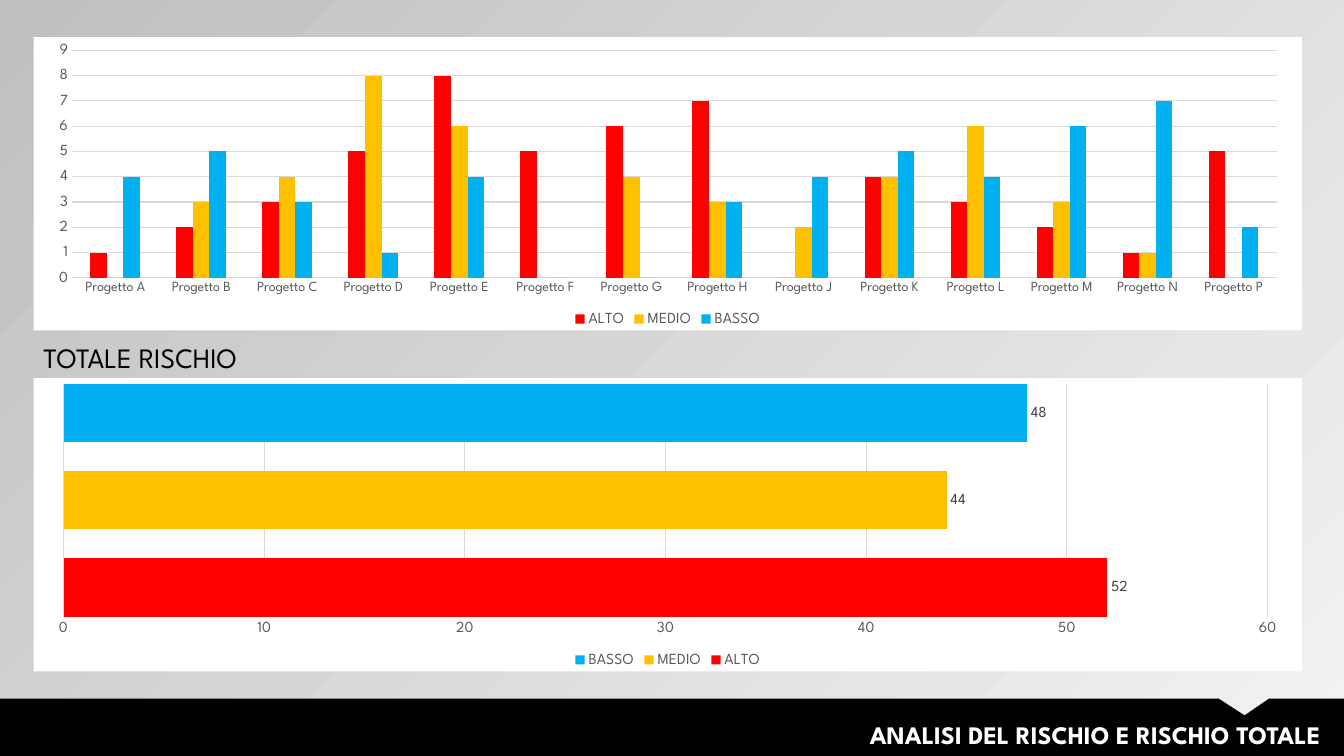
from lxml.etree import fromstring
from pptx import Presentation
from pptx.chart.data import CategoryChartData
from pptx.dml.color import RGBColor
from pptx.enum.chart import XL_CHART_TYPE, XL_LABEL_POSITION, XL_LEGEND_POSITION, XL_TICK_MARK
from pptx.enum.text import MSO_ANCHOR, MSO_AUTO_SIZE, PP_ALIGN
from pptx.util import Pt

BLACK = RGBColor(0x00, 0x00, 0x00)
WHITE = RGBColor(0xFF, 0xFF, 0xFF)
LIGHT = RGBColor(0xF2, 0xF2, 0xF2)
SILVER = RGBColor(0xBF, 0xBF, 0xBF)
GRID = RGBColor(0xD9, 0xD9, 0xD9)
GREY = RGBColor(0x59, 0x59, 0x59)
DARK = RGBColor(0x40, 0x40, 0x40)
RED = RGBColor(0xFF, 0x00, 0x00)
AMBER = RGBColor(0xFF, 0xC0, 0x00)
BLUE = RGBColor(0x00, 0xB0, 0xF0)
FONT = "League Spartan"

TITLE = "ANALISI DEL RISCHIO E RISCHIO TOTALE"
SUBTITLE = "TOTALE RISCHIO"
PROJECTS = [f"Progetto {letter}" for letter in "ABCDEFGHJKLMNP"]
RISKS = [
    ("ALTO", RED, [1, 2, 3, 5, 8, 5, 6, 7, 0, 4, 3, 2, 1, 5]),
    ("MEDIO", AMBER, [0, 3, 4, 8, 6, 0, 4, 3, 2, 4, 6, 3, 1, 0]),
    ("BASSO", BLUE, [4, 5, 3, 1, 4, 0, 0, 3, 4, 5, 4, 6, 7, 2]),
]
TOTALS = [(name, color, [sum(values)]) for name, color, values in RISKS]

WIDTH, HEIGHT = 960, 540
BAND_TOP = 499
BAND = [(0, BAND_TOP), (870.5, BAND_TOP), (889, 511), (906.5, BAND_TOP),
        (WIDTH, BAND_TOP), (WIDTH, HEIGHT), (0, HEIGHT)]
CHART_LEFT, CHART_WIDTH, CHART_HEIGHT = 24, 906, 209.5
PROJECTS_TOP, TOTALS_TOP = 26.5, 270
WHITE_FILL = (
    '<c:spPr xmlns:c="http://schemas.openxmlformats.org/drawingml/2006/chart"'
    ' xmlns:a="http://schemas.openxmlformats.org/drawingml/2006/main">'
    f'<a:solidFill><a:srgbClr val="{WHITE}"/></a:solidFill>'
    '<a:ln><a:noFill/></a:ln></c:spPr>'
)


def set_font(font, size, color, bold=False):
    font.name, font.size, font.bold = FONT, Pt(size), bold
    font.color.rgb = color


def set_text(sp, text, size, color, bold=False, align=PP_ALIGN.LEFT, wrap=True):
    tf = sp.text_frame
    tf.text = text
    tf.word_wrap = wrap
    tf.auto_size = MSO_AUTO_SIZE.SHAPE_TO_FIT_TEXT
    tf.vertical_anchor = MSO_ANCHOR.TOP
    p = tf.paragraphs[0]
    p.alignment = align
    set_font(p.font, size, color, bold)


def set_line(line):
    line.color.rgb = GRID
    line.width = Pt(0.75)


def add_risk_chart(s, kind, top, categories, series, gap, overlap):
    data = CategoryChartData(number_format="0")
    data.categories = categories
    for name, _, values in series:
        data.add_series(name, values)
    chart = s.shapes.add_chart(kind, Pt(CHART_LEFT), Pt(top), Pt(CHART_WIDTH),
                               Pt(CHART_HEIGHT), data).chart
    chart.has_title = False
    set_font(chart.font, 11, BLACK)
    chart._chartSpace.chart.addnext(fromstring(WHITE_FILL))

    chart.has_legend = True
    chart.legend.position = XL_LEGEND_POSITION.BOTTOM
    chart.legend.include_in_layout = False
    set_font(chart.legend.font, 11, GREY)

    for axis, size in ((chart.category_axis, 10), (chart.value_axis, 11)):
        axis.major_tick_mark = axis.minor_tick_mark = XL_TICK_MARK.NONE
        set_font(axis.tick_labels.font, size, GREY)
    set_line(chart.category_axis.format.line)
    chart.value_axis.minimum_scale = 0
    chart.value_axis.format.line.fill.background()
    set_line(chart.value_axis.major_gridlines.format.line)

    plot = chart.plots[0]
    plot.vary_by_categories = False
    plot.gap_width, plot.overlap = gap, overlap
    for bars, (_, color, _) in zip(plot.series, series):
        bars.format.fill.solid()
        bars.format.fill.fore_color.rgb = color
        bars.invert_if_negative = False
    return chart


prs = Presentation()
prs.slide_width, prs.slide_height = Pt(WIDTH), Pt(HEIGHT)
s = prs.slides.add_slide(prs.slide_layouts[5])

bg = s.background.fill
bg.gradient()
bg.gradient_angle = 135
for stop, color, position in zip(bg.gradient_stops, (LIGHT, SILVER), (0, 1)):
    stop.color.rgb = color
    stop.position = position

outline = [(Pt(x), Pt(y)) for x, y in BAND]
builder = s.shapes.build_freeform(*outline[0])
builder.add_line_segments(outline[1:], close=True)
band = builder.convert_to_shape()
band.shadow.inherit = False
band.fill.solid()
band.fill.fore_color.rgb = BLACK
band.line.fill.background()

title = s.shapes.title
title.left, title.top, title.width, title.height = Pt(298), Pt(510), Pt(652.5), Pt(29)
set_text(title, TITLE, 18, WHITE, bold=True, align=PP_ALIGN.RIGHT)
band._element.getparent().append(title._element)

add_risk_chart(s, XL_CHART_TYPE.COLUMN_CLUSTERED, PROJECTS_TOP, PROJECTS, RISKS, 219, 0)

totals = add_risk_chart(s, XL_CHART_TYPE.BAR_CLUSTERED, TOTALS_TOP, ["1"], TOTALS, 0, -50)
totals.category_axis.visible = False
for bars in totals.plots[0].series:
    labels = bars.data_labels
    labels.show_value = True
    labels.number_format, labels.number_format_is_linked = "0", False
    labels.position = XL_LABEL_POSITION.OUTSIDE_END
    set_font(labels.font, 11, DARK)

subtitle = s.shapes.add_textbox(Pt(24), Pt(240), Pt(169), Pt(31.5))
set_text(subtitle, SUBTITLE, 20, BLACK, wrap=False)

prs.save("out.pptx")
